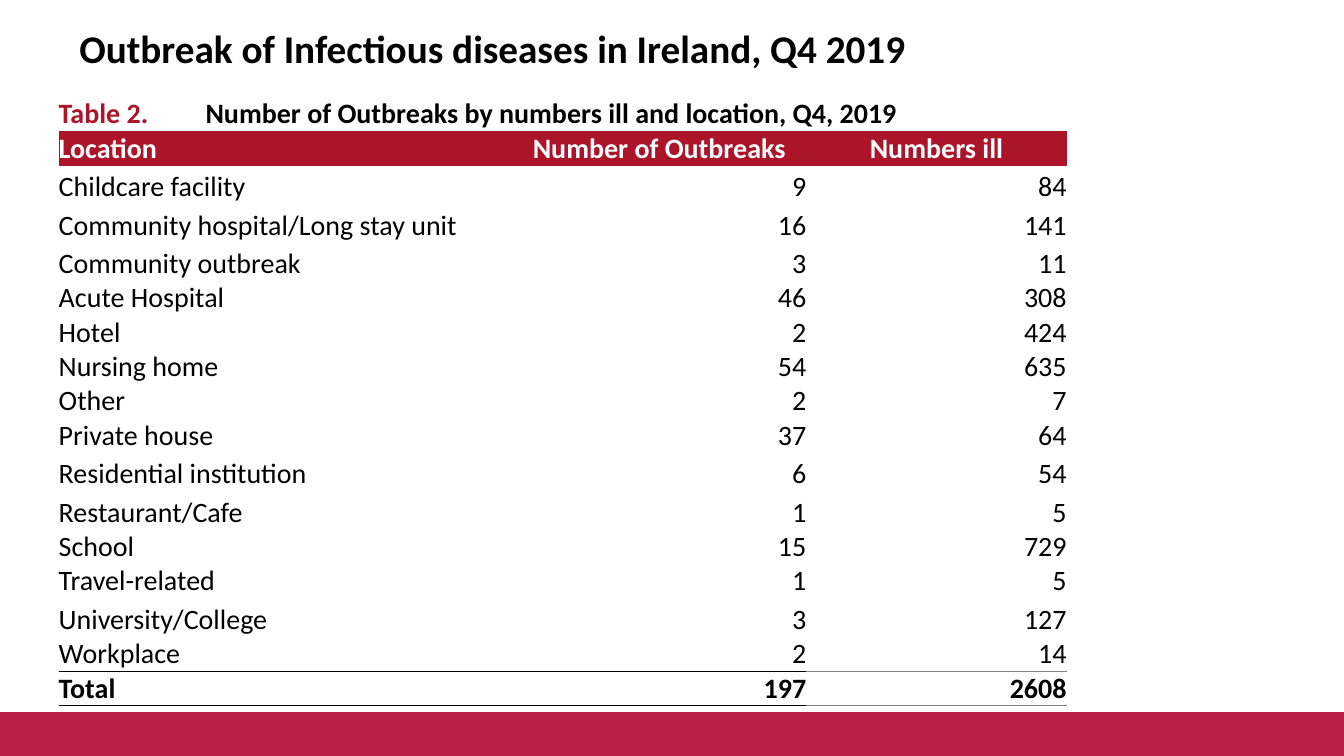
from dataclasses import dataclass

from lxml import etree
from pptx import Presentation
from pptx import util as u
from pptx.dml import color
from pptx.enum import shapes, text
from pptx.oxml import ns


@dataclass(frozen=True)
class Theme:
    font: str = "Calibri"
    title_size: int = 28
    table_size: int = 20
    band: str = "BA1F46"
    accent: str = "AC142A"
    ink: str = "000000"
    paper: str = "FFFFFF"
    soft_rule: str = "808080"


@dataclass(frozen=True)
class Place:
    location: str
    outbreaks: int
    ill: int
    tall: bool = False


@dataclass(frozen=True)
class Rule:
    colour: str
    points: float


THEME = Theme()
PLAIN_TABLE = "{2D5ABB26-0587-4C30-8999-92F81FD0307C}"
LEFT, RIGHT, CENTER = text.PP_ALIGN.LEFT, text.PP_ALIGN.RIGHT, text.PP_ALIGN.CENTER
TALL, SHORT = u.Cm(0.97), u.Cm(0.86)
COLUMNS = [u.Cm(width) for width in (11.43, 7.41, 6.56, 2.96)]
CAPTION_TAB = u.Cm(3.7)
RULES = [Rule(THEME.ink, 0.5), Rule(THEME.ink, 0.5), Rule(THEME.soft_rule, 1)]
HEADINGS = ["Location", "Number of Outbreaks", "Numbers ill"]
PLACES = [
    Place("Childcare facility", 9, 84, True),
    Place("Community hospital/Long stay unit", 16, 141, True),
    Place("Community outbreak", 3, 11, True),
    Place("Acute Hospital", 46, 308),
    Place("Hotel", 2, 424),
    Place("Nursing home", 54, 635),
    Place("Other", 2, 7),
    Place("Private house", 37, 64),
    Place("Residential institution", 6, 54, True),
    Place("Restaurant/Cafe", 1, 5, True),
    Place("School", 15, 729),
    Place("Travel-related", 1, 5),
    Place("University/College", 3, 127, True),
    Place("Workplace", 2, 14),
]
TOTAL = Place("Total", sum(p.outbreaks for p in PLACES), sum(p.ill for p in PLACES))


def apply(target, values: dict) -> None:
    for name, value in values.items():
        setattr(target, name, value)


def add_words(paragraph, words: str, size: int, colour: str, bold: bool) -> None:
    run = paragraph.add_run()
    run.text = words
    apply(run.font, {"name": THEME.font, "size": u.Pt(size), "bold": bold})
    run.font.color.rgb = color.RGBColor.from_string(colour)


def write_cell(cell, words: str, align, colour: str = THEME.ink, bold: bool = False) -> None:
    paragraph = cell.text_frame.paragraphs[0]
    paragraph.alignment = align
    add_words(paragraph, words, THEME.table_size, colour, bold)


def add_rule(cell, side: str, rule: Rule) -> None:
    properties = cell._tc.get_or_add_tcPr()
    line = etree.Element(ns.qn(f"a:{side}"), w=str(u.Pt(rule.points)))
    fill = etree.SubElement(line, ns.qn("a:solidFill"))
    etree.SubElement(fill, ns.qn("a:srgbClr"), val=rule.colour)
    properties.insert(0, line)


def add_band(slide, width: int) -> None:
    band = slide.shapes.add_shape(
        shapes.MSO_SHAPE.RECTANGLE, 0, u.Cm(17.98), width, u.Cm(1.07))
    band.shadow.inherit = False
    band.fill.solid()
    for paint in (band.fill.fore_color, band.line.color):
        paint.rgb = color.RGBColor.from_string(THEME.band)
    band.line.width = u.Pt(2)


def add_title(slide) -> None:
    title = slide.shapes.add_textbox(u.Cm(1.7), u.Cm(0.43), u.Cm(26.24), u.Cm(1.57))
    apply(title.text_frame, {
        "word_wrap": True,
        "vertical_anchor": text.MSO_ANCHOR.MIDDLE,
        "margin_left": u.Cm(0.3),
        "margin_right": u.Cm(0.3),
        "margin_top": u.Cm(0.15),
        "margin_bottom": u.Cm(0.15),
    })
    add_words(title.text_frame.paragraphs[0],
              "Outbreak of Infectious diseases in Ireland, Q4 2019",
              THEME.title_size, THEME.ink, True)


def write_caption(cell) -> None:
    paragraph = cell.text_frame.paragraphs[0]
    tabs = etree.SubElement(paragraph._p.get_or_add_pPr(), ns.qn("a:tabLst"))
    etree.SubElement(tabs, ns.qn("a:tab"), pos=str(CAPTION_TAB), algn="l")
    add_words(paragraph, "Table 2.", THEME.table_size, THEME.accent, True)
    add_words(paragraph, "\tNumber of Outbreaks by numbers ill and location, Q4, 2019",
              THEME.table_size, THEME.ink, True)


def add_outbreak_table(slide) -> None:
    body = [*PLACES, TOTAL]
    heights = [TALL, SHORT, *(TALL if place.tall else SHORT for place in body)]
    outbreaks = slide.shapes.add_table(
        len(heights), len(COLUMNS), u.Cm(1.48), u.Cm(2.34),
        sum(COLUMNS), sum(heights)).table
    apply(outbreaks, {"first_row": False, "horz_banding": False})
    outbreaks._tbl.tblPr.find(ns.qn("a:tableStyleId")).text = PLAIN_TABLE
    for column, width in zip(outbreaks.columns, COLUMNS):
        column.width = width
    for row, height in zip(outbreaks.rows, heights):
        row.height = height
    for cell in outbreaks.iter_cells():
        apply(cell, {
            "margin_left": 0, "margin_right": 0, "margin_top": 0, "margin_bottom": 0,
            "vertical_anchor": text.MSO_ANCHOR.BOTTOM,
        })
        cell.fill.background()

    outbreaks.cell(0, 0).merge(outbreaks.cell(0, len(COLUMNS) - 1))
    write_caption(outbreaks.cell(0, 0))
    for index, (heading, align) in enumerate(zip(HEADINGS, (LEFT, CENTER, CENTER))):
        cell = outbreaks.cell(1, index)
        write_cell(cell, heading, align, THEME.paper, True)
        cell.fill.solid()
        cell.fill.fore_color.rgb = color.RGBColor.from_string(THEME.accent)
    for row, place in enumerate(body, start=2):
        values = (place.location, place.outbreaks, place.ill)
        for index, (value, align) in enumerate(zip(values, (LEFT, RIGHT, RIGHT))):
            write_cell(outbreaks.cell(row, index), str(value), align, bold=place is TOTAL)

    last = len(heights) - 1
    for index, rule in enumerate(RULES):
        for row, side in ((last - 1, "lnB"), (last, "lnB"), (last, "lnT")):
            add_rule(outbreaks.cell(row, index), side, rule)


def main() -> None:
    deck = Presentation()
    apply(deck, {"slide_width": u.Cm(33.87), "slide_height": u.Cm(19.05)})
    slide = deck.slides.add_slide(deck.slide_layouts[6])
    add_band(slide, deck.slide_width)
    add_outbreak_table(slide)
    add_title(slide)
    deck.save("out.pptx")


if __name__ == "__main__":
    main()
